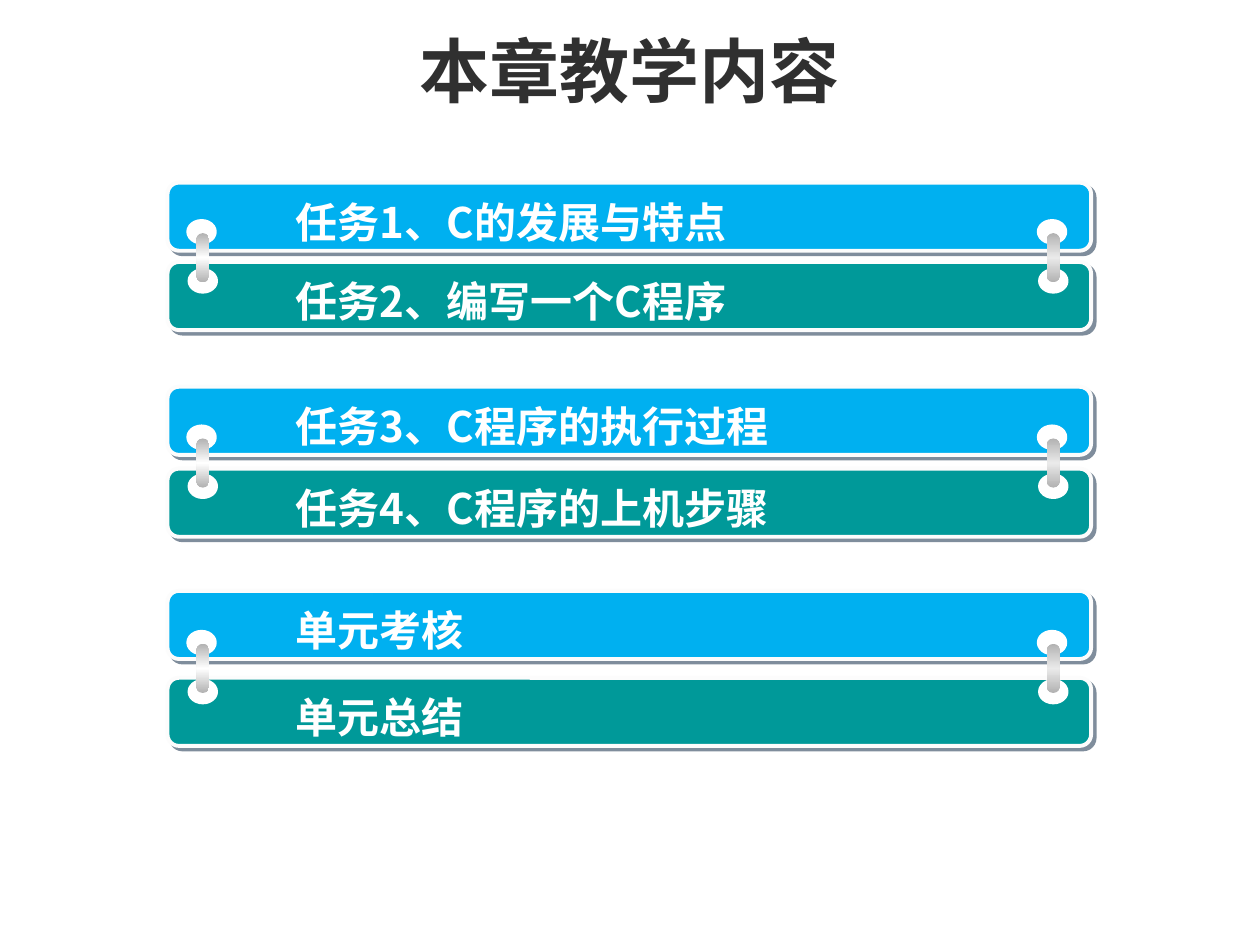
import copy

import pptx
import pptx.dml.color
import pptx.enum.shapes
import pptx.enum.text
import pptx.oxml.ns
import pptx.util
from lxml import etree

Inches = pptx.util.Inches
Pt = pptx.util.Pt
qn = pptx.oxml.ns.qn
SHAPE = pptx.enum.shapes.MSO_SHAPE
ALIGN = pptx.enum.text.PP_ALIGN


def rgb(value):
    return pptx.dml.color.RGBColor.from_string(value)


def add_shadow(effects, color, alpha, dist):
    """Add a hard shadow falling to the lower right to an effect list."""
    shadow = etree.SubElement(effects, qn("a:outerShdw"), blurRad="0",
                              dist=str(Pt(dist)), dir="2700000", algn="ctr", rotWithShape="0")
    clr = etree.SubElement(shadow, qn("a:srgbClr"), val=color)
    etree.SubElement(clr, qn("a:alpha"), val=str(alpha * 1000))


class Deck:
    FONT = "Noto Sans CJK SC"
    TITLE_FONT = "Arial"
    WHITE = "FFFFFF"
    EDGE = "FCFCFC"
    SHADOW = "001D3A"
    METAL = "B2B2B2"
    BAR_LEFT, BAR_W, BAR_H = 1.33, 7.33, 0.54

    def __init__(self):
        self.prs = pptx.Presentation()
        self.prs.slide_width, self.prs.slide_height = Inches(10), Inches(7.5)
        self.s = self.prs.slides.add_slide(self.prs.slide_layouts[6])

    def shape(self, parent, kind, x, y, w, h, fill=None, line=None, width=0):
        sp = parent.shapes.add_shape(kind, Inches(x), Inches(y), Inches(w), Inches(h))
        sp.shadow.inherit = False
        if fill:
            sp.fill.solid()
            sp.fill.fore_color.rgb = rgb(fill)
        if line:
            sp.line.color.rgb = rgb(line)
            sp.line.width = Pt(width)
        else:
            sp.line.fill.background()
        return sp

    def bar(self, parent, y, fill):
        sp = self.shape(parent, SHAPE.ROUNDED_RECTANGLE, self.BAR_LEFT, y,
                        self.BAR_W, self.BAR_H, fill, self.EDGE, 2.25)
        add_shadow(sp._element.spPr.find(qn("a:effectLst")), self.SHADOW, 50, 2.8)

    def link(self, parent, x, y, shine):
        """Draw two holes and the metal ring that joins them."""
        for dx, dy in ((0, 0), (0.01, 0.39)):
            self.shape(parent, SHAPE.OVAL, x + dx, y + dy, 0.2, 0.16, self.WHITE, self.WHITE, 3)
        sp = self.shape(parent, SHAPE.ROUNDED_RECTANGLE, x + 0.06, y + 0.09, 0.1, 0.39)
        sp.adjustments[0] = 0.5
        sp.fill.gradient()
        sp.fill.gradient_angle = 90
        first = sp._element.spPr.find(".//" + qn("a:gs"))
        first.addnext(copy.deepcopy(first))
        for i, color in enumerate((self.METAL, shine, self.METAL)):
            stop = sp.fill.gradient_stops[i]
            stop.position = i / 2
            stop.color.rgb = rgb(color)

    def text(self, parent, text, x, y, w, h, size, color, font, align=ALIGN.LEFT):
        tf = parent.shapes.add_textbox(Inches(x), Inches(y), Inches(w), Inches(h)).text_frame
        tf.word_wrap = True
        tf.text = text
        p = tf.paragraphs[0]
        p.alignment = align
        r = p.runs[0]
        r.font.size, r.font.bold, r.font.name = Pt(size), True, font
        r.font.color.rgb = rgb(color)
        return r

    def label(self, parent, text, bar_y):
        r = self.text(parent, text, 2.25, bar_y + 0.06, 5.5, 0.5, 24, self.WHITE, self.FONT)
        rPr = r.font._element
        effects = etree.Element(qn("a:effectLst"))
        add_shadow(effects, "000000", 60, 2)
        rPr.find(qn("a:solidFill")).addnext(effects)
        etree.SubElement(rPr, qn("a:ea"), typeface=self.FONT)

    def pair(self, rows, ring_y):
        """Draw two labelled bars bound by a ring at each end."""
        group = self.s.shapes.add_group_shape()
        for (text, y), fill in zip(rows, ("00B0F0", "009999")):
            self.bar(group, y, fill)
            self.label(group, text, y)
        self.link(group, 8.25, ring_y, "EAEAEA")
        self.link(group, 1.5, ring_y, "FFFFFF")

    def title(self, text):
        self.text(self.s, text, self.BAR_LEFT, 0.17, self.BAR_W, 0.77, 40, "303030",
                  self.TITLE_FONT, ALIGN.CENTER)


def main():
    deck = Deck()
    deck.pair((("任务1、C的发展与特点", 1.45), ("任务2、编写一个C程序", 2.08)), 1.76)
    deck.pair((("任务3、C程序的执行过程", 3.07), ("任务4、C程序的上机步骤", 3.72)), 3.39)
    deck.pair((("单元考核", 4.69), ("单元总结", 5.38)), 5.02)
    deck.title("本章教学内容")
    deck.prs.save("out.pptx")


if __name__ == "__main__":
    main()
